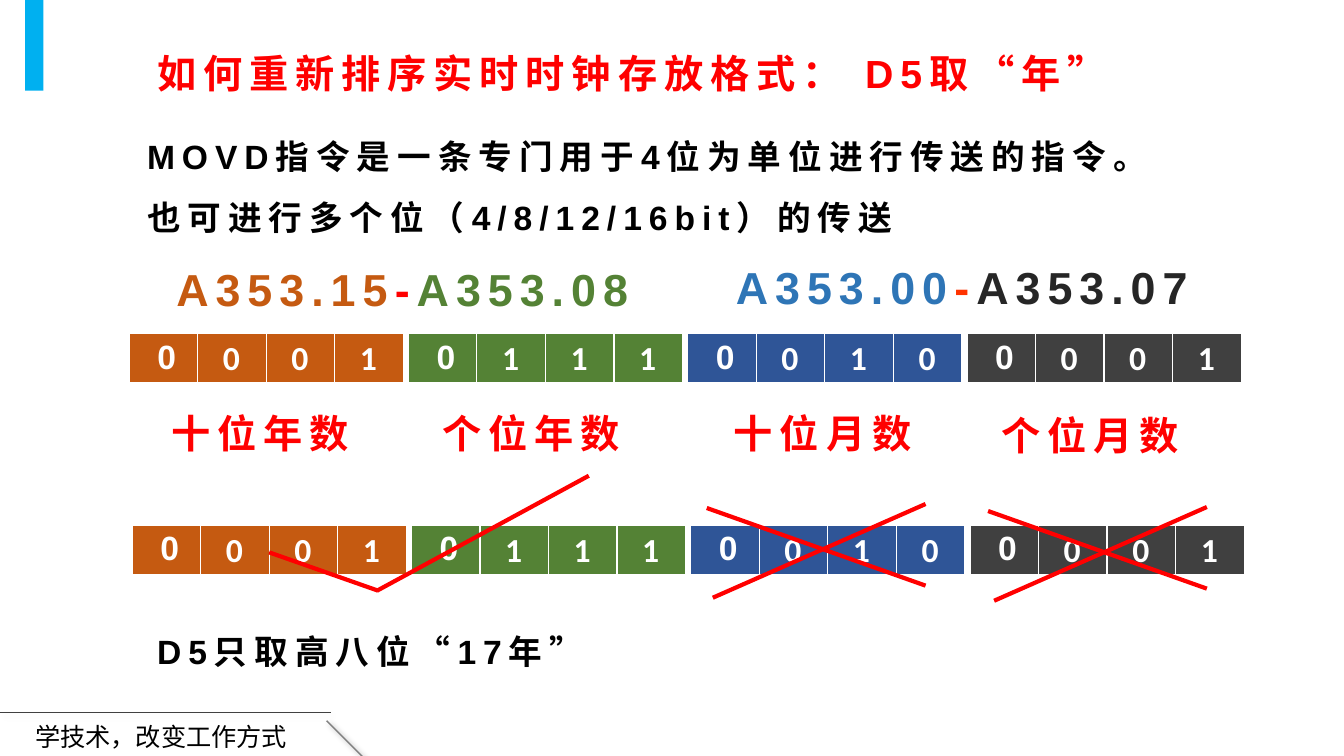
from dataclasses import dataclass

from lxml.etree import SubElement
from pptx import Presentation
from pptx.dml.color import RGBColor
from pptx.enum.shapes import MSO_CONNECTOR, MSO_SHAPE
from pptx.enum.text import MSO_AUTO_SIZE
from pptx.oxml import parse_xml
from pptx.oxml.ns import nsdecls, qn
from pptx.slide import Slide
from pptx.util import Inches, Pt

BLACK = RGBColor(0x00, 0x00, 0x00)
WHITE = RGBColor(0xFF, 0xFF, 0xFF)
RED = RGBColor(0xFF, 0x00, 0x00)
SCARLET = RGBColor(0xFF, 0x33, 0x00)
ORANGE = RGBColor(0xC5, 0x5A, 0x11)
GREEN = RGBColor(0x54, 0x82, 0x35)
NAVY = RGBColor(0x2F, 0x55, 0x97)
BLUE = RGBColor(0x2E, 0x75, 0xB6)
SKY = RGBColor(0x00, 0xB0, 0xF0)
COAL = RGBColor(0x40, 0x40, 0x40)
INK = RGBColor(0x26, 0x26, 0x26)
GREY = RGBColor(0x80, 0x80, 0x80)
HAN = "Noto Sans CJK SC"

Run = tuple[str, RGBColor]


@dataclass
class Nibble:
    bits: str
    fill: RGBColor
    label: str
    left: float
    top: float


@dataclass
class Stroke:
    start: tuple[float, float]
    end: tuple[float, float]
    color: RGBColor = RED
    width: float = 3
    shadow: bool = False


NIBBLES = [
    Nibble("0001", ORANGE, "十位年数", 1.6, 4.01),
    Nibble("0111", GREEN, "个位年数", 4.29, 4.01),
    Nibble("0010", NAVY, "十位月数", 7.18, 4.01),
    Nibble("0001", COAL, "个位月数", 9.83, 4.03),
]
ROWS = [(1.28, 3.31), (1.31, 5.21)]
PITCH = 2.77
FRAME = [
    Stroke((0, 7.07), (3.28, 7.07), COAL, 0.25, True),
    Stroke((3.24, 7.15), (3.6, 7.51), GREY, 1, True),
]
CROSSES = [(7.01, 5), (9.8, 5.03)]
TICK = [
    Stroke((2.67, 5.48), (3.75, 5.86)),
    Stroke((3.74, 5.86), (5.84, 4.72)),
]


def add_text(slide: Slide, lines: list[list[Run]], left: float, top: float,
             width: float, height: float, *, size: float = 28,
             font: str = "Arial", bold: bool = True, track: int = 500,
             wrap: bool = False, space: float = 1) -> None:
    box = slide.shapes.add_textbox(
        Inches(left), Inches(top), Inches(width), Inches(height))
    frame = box.text_frame
    frame.word_wrap = wrap
    frame.auto_size = MSO_AUTO_SIZE.SHAPE_TO_FIT_TEXT
    for index, line in enumerate(lines):
        para = frame.add_paragraph() if index else frame.paragraphs[0]
        para.line_spacing = space
        for text, color in line:
            run = para.add_run()
            run.text = text
            run.font.size = Pt(size)
            run.font.bold = bold
            run.font.name = font
            run.font.color.rgb = color
            props = run.font._element
            if track:
                props.set("spc", str(track))
            SubElement(props, qn("a:ea")).set("typeface", HAN)


def add_stroke(slide: Slide, stroke: Stroke) -> None:
    ends = [Inches(value) for value in (*stroke.start, *stroke.end)]
    line = slide.shapes.add_connector(MSO_CONNECTOR.STRAIGHT, *ends)
    line.line.color.rgb = stroke.color
    line.line.width = Pt(stroke.width)
    effect = SubElement(line._element.spPr, qn("a:effectLst"))
    if stroke.shadow:
        effect.append(parse_xml(
            f'<a:outerShdw {nsdecls("a")} blurRad="{Pt(4)}" dist="{Pt(3)}" '
            'dir="2700000"><a:srgbClr val="000000"><a:alpha val="40000"/>'
            '</a:srgbClr></a:outerShdw>'))


def add_nibble(slide: Slide, nibble: Nibble, left: float, top: float) -> None:
    table = slide.shapes.add_table(
        1, len(nibble.bits), Inches(left), Inches(top),
        Inches(2.72), Inches(0.41)).table
    table.first_row = False
    table.horz_banding = False
    for index, bit in enumerate(nibble.bits):
        cell = table.cell(0, index)
        cell.fill.solid()
        cell.fill.fore_color.rgb = nibble.fill
        cell.margin_left = Inches(0.25 if index else 0.28)
        cell.text = bit
        font = cell.text_frame.paragraphs[0].runs[0].font
        font.name = "Calibri" if index else "Arial"
        font.size = Pt(24)
        font.bold = True
        font.color.rgb = WHITE
        props = cell._tc.get_or_add_tcPr()
        for order, side in enumerate("LRTB"):
            width = Pt(3 if side == "B" else 1)
            props.insert(order, parse_xml(
                f'<a:ln{side} {nsdecls("a")} w="{width}"><a:solidFill>'
                f'<a:srgbClr val="{WHITE}"/></a:solidFill></a:ln{side}>'))


def add_cross(slide: Slide, left: float, top: float) -> None:
    right = left + 2.17
    add_stroke(slide, Stroke((left, top + 0.04), (right, top + 0.81)))
    add_stroke(slide, Stroke((right, top), (left + 0.06, top + 0.93)))


def main() -> None:
    deck = Presentation()
    deck.slide_width = Inches(13.33)
    deck.slide_height = Inches(7.5)
    slide = deck.slides.add_slide(deck.slide_layouts[6])

    for stroke in FRAME:
        add_stroke(slide, stroke)
    add_text(slide, [[("学技术，改变工作方式", BLACK)]], 0.25, 7.11, 12.16, 0.4,
             size=18, font=HAN, bold=False, track=0, wrap=True)
    bar = slide.shapes.add_shape(
        MSO_SHAPE.RECTANGLE, Inches(0.25), 0, Inches(0.18), Inches(0.9))
    bar.shadow.inherit = False
    bar.fill.solid()
    bar.fill.fore_color.rgb = SKY
    bar.line.fill.background()

    add_text(slide, [[("如何重新排序实时时钟存放格式： D5取“年”", RED)]],
             1.46, 0.44, 9.82, 0.57)
    add_text(slide, [[("MOVD指令是一条专门用于4位为单位进行传送的指令。", BLACK)],
                     [("也可进行多个位（4/8/12/16bit）的传送", BLACK)]],
             1.36, 1.1, 10.59, 1.24, size=24, wrap=True, space=1.5)
    add_text(slide, [[("A353.15", ORANGE), ("-", RED), ("A353.08", GREEN)]],
             1.65, 2.55, 4.79, 0.64, size=32)
    add_text(slide, [[("A353.00", BLUE), ("-", SCARLET), ("A353.07", INK)]],
             7.2, 2.53, 4.79, 0.64, size=32)

    for left, top in ROWS:
        for index, nibble in enumerate(NIBBLES):
            add_nibble(slide, nibble, left + index * PITCH, top)
    for nibble in NIBBLES:
        add_text(slide, [[(nibble.label, RED)]],
                 nibble.left, nibble.top, 2.05, 0.57)

    for left, top in CROSSES:
        add_cross(slide, left, top)
    add_text(slide, [[("D5只取高八位“17年”", BLACK)]], 1.46, 6.21, 5.24, 0.5,
             size=24, wrap=True)
    for stroke in TICK:
        add_stroke(slide, stroke)
    deck.save("out.pptx")


if __name__ == "__main__":
    main()
